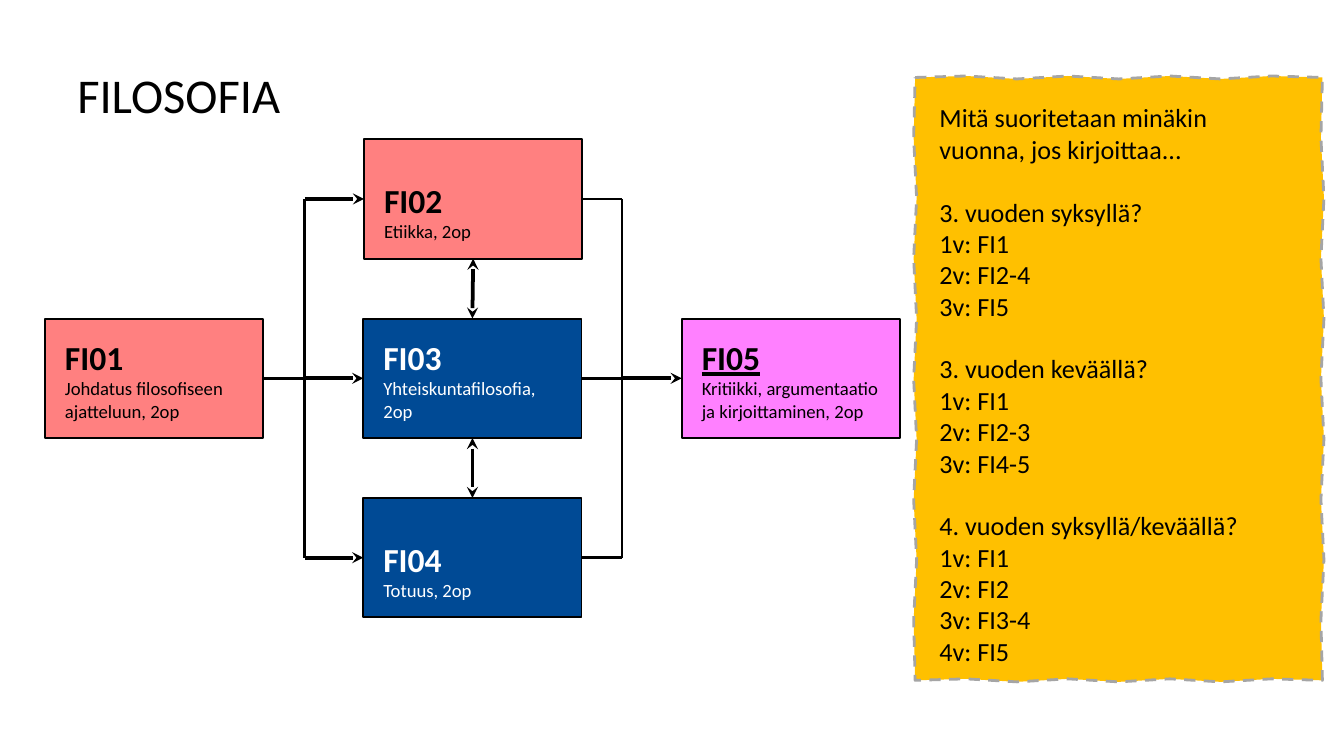
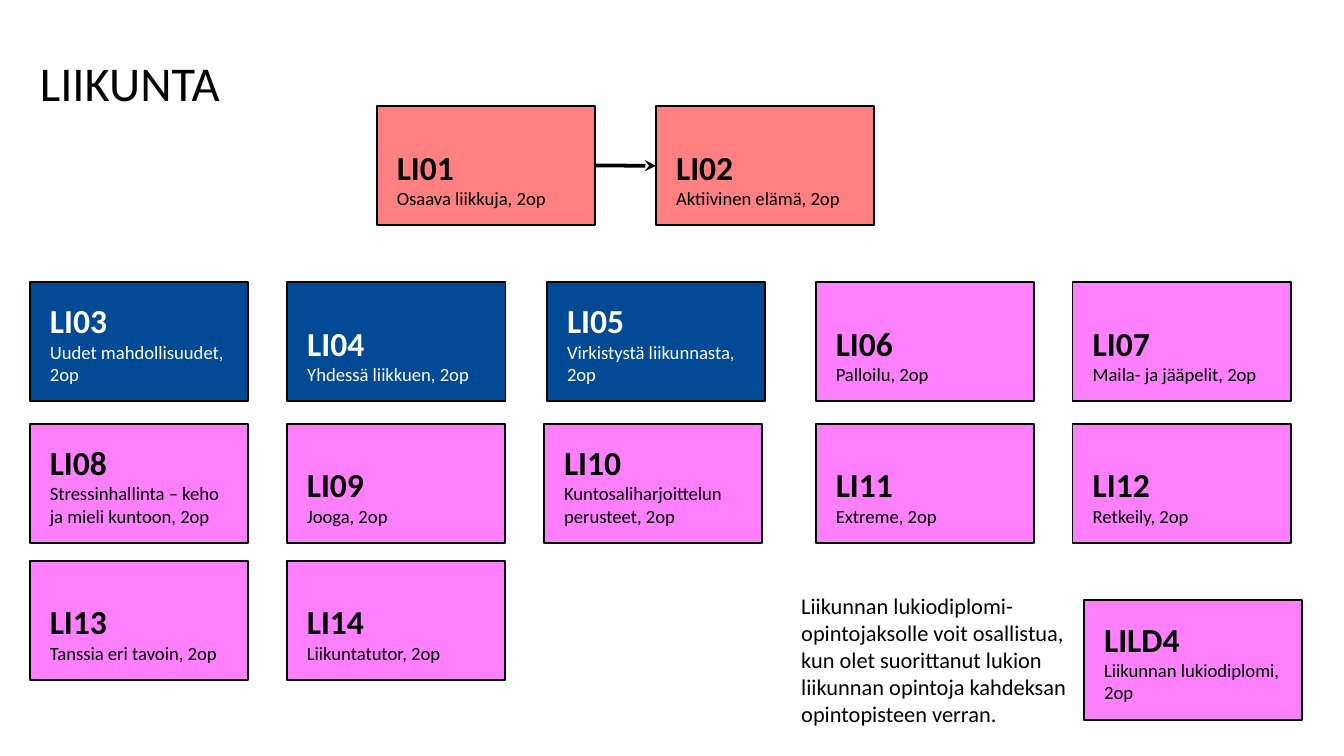
import pptx
import pptx.util
import pptx.dml.color
import pptx.enum.dml
import pptx.enum.shapes
import pptx.enum.text
import pptx.oxml.ns
import lxml.etree

Pt = pptx.util.Pt
ANCHOR = pptx.enum.text.MSO_ANCHOR

FONT = "Calibri"
BLACK, WHITE = "000000", "FFFFFF"
RED, BLUE, PINK = "FF8080", "004A95", "FF80FF"
AMBER, GREY = "FFC000", "A5A5A5"
CARD_W, CARD_H = 117, 64
TOP, LEFT, BOTTOM, RIGHT = range(4)


def rgb(value):
    return pptx.dml.color.RGBColor.from_string(value)


def style_shape(sp, fill, line, width):
    sp.shadow.inherit = False
    sp.fill.solid()
    sp.fill.fore_color.rgb = rgb(fill)
    sp.line.color.rgb = rgb(line)
    sp.line.width = Pt(width)


def set_frame(tf, inset_x, inset_y, anchor=ANCHOR.TOP):
    tf.word_wrap = True
    tf.vertical_anchor = anchor
    tf.margin_left = tf.margin_right = Pt(inset_x)
    tf.margin_top = tf.margin_bottom = Pt(inset_y)


def write(p, text, size, color=BLACK, bold=False, underline=False):
    p.text = text
    p.alignment = pptx.enum.text.PP_ALIGN.LEFT
    p.font.name = FONT
    p.font.size = Pt(size)
    p.font.bold = bold
    p.font.underline = underline
    p.font.color.rgb = rgb(color)


def add_text(s, x, y, w, h, text, size):
    tf = s.shapes.add_textbox(Pt(x), Pt(y), Pt(w), Pt(h)).text_frame
    set_frame(tf, 5.4, 2.7)
    tf.auto_size = pptx.enum.text.MSO_AUTO_SIZE.SHAPE_TO_FIT_TEXT
    write(tf.paragraphs[0], text, size)


def add_title(s, x, y, text):
    add_text(s, x, y, 244, 37, text, 26)


def add_card(s, x, y, fill, code, name, underline=False):
    """Course card: bold code above the course name."""
    sp = s.shapes.add_shape(pptx.enum.shapes.MSO_SHAPE.RECTANGLE,
                            Pt(x), Pt(y), Pt(CARD_W), Pt(CARD_H))
    style_shape(sp, fill, BLACK, 1)
    tf = sp.text_frame
    set_frame(tf, 10.8, 8.6, ANCHOR.BOTTOM)
    color = WHITE if fill == BLUE else BLACK
    write(tf.paragraphs[0], code, 18, color, True, underline)
    write(tf.add_paragraph(), name, 10, color)
    return sp


def add_link(s, start, end, width=1.5, head=False, tail=False):
    """Each end is a point (x, y) or a joint (card, side)."""
    joints = [not isinstance(e[0], (int, float)) for e in (start, end)]
    (x1, y1), (x2, y2) = [(0, 0) if joined else e
                          for e, joined in zip((start, end), joints)]
    cn = s.shapes.add_connector(pptx.enum.shapes.MSO_CONNECTOR.STRAIGHT,
                                Pt(x1), Pt(y1), Pt(x2), Pt(y2))
    if joints[0]:
        cn.begin_connect(*start)
    if joints[1]:
        cn.end_connect(*end)
    cn.line.color.rgb = rgb(BLACK)
    cn.line.width = Pt(width)
    qn = pptx.oxml.ns.qn
    ln = cn.line._get_or_add_ln()
    for tag, wanted in (("a:headEnd", head), ("a:tailEnd", tail)):
        if wanted:
            lxml.etree.SubElement(ln, qn(tag), type="stealth")
    lxml.etree.SubElement(cn._element.spPr, qn("a:effectLst"))


def add_arrow(s, start, end, both=False):
    add_link(s, start, end, 2, head=both, tail=True)


def add_rough_note(s, x, y, w, h, groups):
    """Note with an uneven edge; a gap precedes each group of lines."""
    rough = 0.8
    corners = [(x, y), (x + w, y), (x + w, y + h), (x, y + h)]
    points = []
    for i, (x1, y1) in enumerate(corners):
        x2, y2 = corners[(i + 1) % 4]
        level = y1 == y2
        steps = 8 if level else 10
        for k in range(steps):
            u = k / steps
            d = rough * (-1) ** k if k else 0
            points.append((Pt(x1 + (x2 - x1) * u + (0 if level else d)),
                           Pt(y1 + (y2 - y1) * u + (d if level else 0))))
    fb = s.shapes.build_freeform(*points[0])
    fb.add_line_segments(points[1:], close=True)
    sp = fb.convert_to_shape()
    style_shape(sp, AMBER, GREY, 1.5)
    sp.line.dash_style = pptx.enum.dml.MSO_LINE.DASH
    tf = sp.text_frame
    set_frame(tf, 13 + rough, 13 + rough)
    p = tf.paragraphs[0]
    for g, lines in enumerate(groups):
        for i, text in enumerate(lines):
            if g or i:
                p = tf.add_paragraph()
            write(p, text, 14)
            if g and i == 0:
                p.space_before = Pt(16.8)


def philosophy_slide(s):
    add_title(s, 36, 32, "FILOSOFIA")

    # Course cards on a grid of three columns and three rows
    cols = [24 + 170.6 * i for i in range(3)]
    rows = [74.6 + 96.1 * i for i in range(3)]
    fi1 = add_card(s, cols[0], rows[1], RED, "FI01",
                   "Johdatus filosofiseen ajatteluun, 2op")
    fi2 = add_card(s, cols[1] + 0.4, rows[0], RED, "FI02", "Etiikka, 2op")
    fi3 = add_card(s, cols[1], rows[1], BLUE, "FI03",
                   "Yhteiskuntafilosofia, 2op")
    fi4 = add_card(s, cols[1], rows[2], BLUE, "FI04", "Totuus, 2op")

    add_rough_note(s, 490.3, 41.5, 218.2, 323, [
        ["Mitä suoritetaan minäkin vuonna, jos kirjoittaa..."],
        ["3. vuoden syksyllä?", "1v: FI1", "2v: FI2-4", "3v: FI5"],
        ["3. vuoden keväällä?", "1v: FI1", "2v: FI2-3", "3v: FI4-5"],
        ["4. vuoden syksyllä/keväällä?", "1v: FI1", "2v: FI2",
         "3v: FI3-4", "4v: FI5"],
    ])
    fi5 = add_card(s, cols[2], rows[1], PINK, "FI05",
                   "Kritiikki, argumentaatio ja kirjoittaminen, 2op", True)

    # Branches from the first course and back to the last one
    split_x, merge_x = 163.3, 333.2
    mids = [y + CARD_H / 2 for y in rows]
    for x in (split_x, merge_x):
        add_link(s, (x, mids[0]), (x, mids[2]))
    add_link(s, (fi1, RIGHT), (split_x, mids[1]))
    for card, y in zip((fi2, fi3, fi4), mids):
        add_arrow(s, (split_x, y), (card, LEFT))
        add_link(s, (card, RIGHT), (merge_x, y))
    add_arrow(s, (merge_x, mids[1]), (fi5, LEFT))
    for upper, lower in ((fi2, fi3), (fi3, fi4)):
        add_arrow(s, (upper, BOTTOM), (lower, TOP), both=True)


def sports_slide(s):
    add_title(s, 16, 25.9, "LIIKUNTA")

    # Compulsory courses
    li1 = add_card(s, 201.8, 56.7, RED, "LI01", "Osaava liikkuja, 2op")
    li2 = add_card(s, 351.4, 56.8, RED, "LI02", "Aktiivinen elämä, 2op")
    add_arrow(s, (li1, RIGHT), (li2, LEFT))

    # Optional courses, row by row, numbered from LI03
    upper_cols = [16, 153.8, 293, 437, 574.6]
    lower_cols = [15.9, 153.6, 291.4, 437, 574.6]
    rows = [
        (151, upper_cols, [
            "Uudet mahdollisuudet, 2op", "Yhdessä liikkuen, 2op",
            "Virkistystä liikunnasta, 2op", "Palloilu, 2op",
            "Maila- ja jääpelit, 2op"]),
        (227, lower_cols, [
            "Stressinhallinta – keho ja mieli kuntoon, 2op", "Jooga, 2op",
            "Kuntosaliharjoittelun perusteet, 2op", "Extreme, 2op",
            "Retkeily, 2op"]),
        (300.4, lower_cols, ["Tanssia eri tavoin, 2op",
                             "Liikuntatutor, 2op"]),
    ]
    number = 3
    for y, cols, names in rows:
        for x, name in zip(cols, names):
            fill = BLUE if number <= 5 else PINK
            add_card(s, x, y, fill, f"LI{number:02}", name)
            number += 1

    # Diploma
    add_card(s, 580.7, 321.6, PINK, "LILD4", "Liikunnan lukiodiplomi, 2op")
    add_text(s, 423.8, 314.6, 162, 78.5,
             "Liikunnan lukiodiplomi-opintojaksolle voit osallistua, kun olet "
             "suorittanut lukion liikunnan opintoja kahdeksan opintopisteen "
             "verran.", 12)


def main():
    prs = pptx.Presentation()
    prs.slide_width, prs.slide_height = Pt(720), Pt(405)
    for build in (philosophy_slide, sports_slide):
        build(prs.slides.add_slide(prs.slide_layouts[6]))
    prs.save("out.pptx")


if __name__ == "__main__":
    main()
